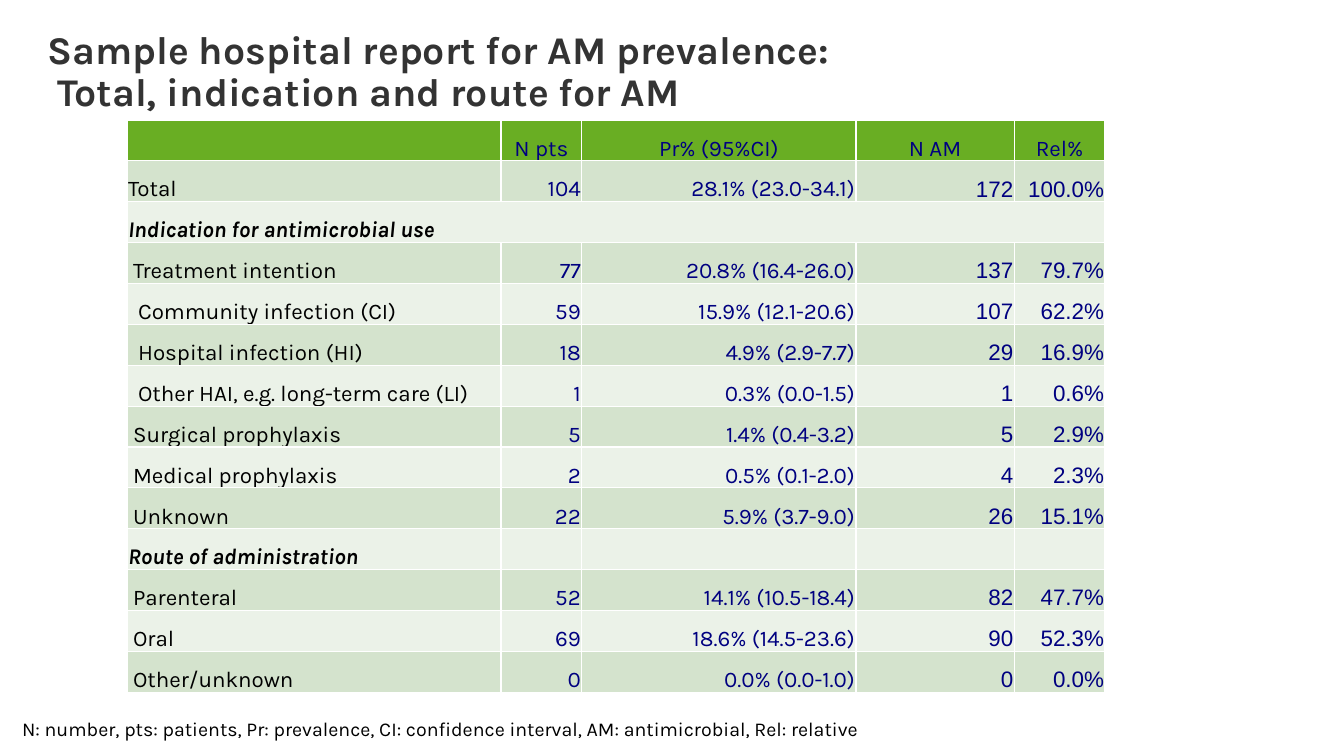
from lxml.etree import fromstring
from pptx import Presentation
from pptx.dml.color import RGBColor
from pptx.enum.text import MSO_ANCHOR, PP_ALIGN
from pptx.util import Inches, Pt

BLACK = RGBColor(0x00, 0x00, 0x00)
GREY = RGBColor(0x33, 0x33, 0x33)
NAVY = RGBColor(0x00, 0x00, 0x80)
GREEN = RGBColor(0x69, 0xAE, 0x23)
PALE = RGBColor(0xEB, 0xF2, 0xE8)
SAGE = RGBColor(0xD4, 0xE3, 0xCD)

EDGE = (
    '<a:{} xmlns:a="http://schemas.openxmlformats.org/drawingml/2006/main" w="12700">'
    '<a:solidFill><a:srgbClr val="FFFFFF"/></a:solidFill></a:{}>'
)
WIDTHS = (3.71, 0.8, 2.72, 1.57, 0.9)
HEADS = ("", "N pts", "Pr% (95%CI)", "N AM", "Rel%")
ROWS = (
    (0, "Total", "104", "28.1% (23.0-34.1)", "172", "100.0%"),
    (0, "Indication for antimicrobial use"),
    (1, "Treatment intention", "77", "20.8% (16.4-26.0)", "137", "79.7%"),
    (2, "Community infection (CI)", "59", "15.9% (12.1-20.6)", "107", "62.2%"),
    (2, "Hospital infection (HI)", "18", "4.9% (2.9-7.7)", "29", "16.9%"),
    (2, "Other HAI, e.g. long-term care (LI)", "1", "0.3% (0.0-1.5)", "1", "0.6%"),
    (1, "Surgical prophylaxis", "5", "1.4% (0.4-3.2)", "5", "2.9%"),
    (1, "Medical prophylaxis", "2", "0.5% (0.1-2.0)", "4", "2.3%"),
    (1, "Unknown", "22", "5.9% (3.7-9.0)", "26", "15.1%"),
    (0, "Route of administration", "", "", "", ""),
    (1, "Parenteral", "52", "14.1% (10.5-18.4)", "82", "47.7%"),
    (1, "Oral", "69", "18.6% (14.5-23.6)", "90", "52.3%"),
    (1, "Other/unknown", "0", "0.0% (0.0-1.0)", "0", "0.0%"),
)
BOLD_ROWS = ("Indication for antimicrobial use", "Route of administration")


class Report:
    """Holds the style and the current slide of a hospital report."""

    font = "Karla"
    digits = "Arial"
    size = 16

    def __init__(self, slide):
        self.slide = slide

    def style(self, para, size, color, bold=False, italic=False, name=None):
        para.line_spacing = 0.9
        font = para.font
        font.name = name or self.font
        font.size = Pt(size)
        font.color.rgb = color
        font.bold = bold
        font.italic = italic

    def text(self, words, box, size, color, bold=False, inset=None):
        frame = self.slide.shapes.add_textbox(*map(Inches, box)).text_frame
        frame.word_wrap = True
        if inset is not None:
            frame.margin_left = frame.margin_right = Inches(inset)
            frame.margin_top = frame.margin_bottom = Inches(inset)
        frame.text = words
        self.style(frame.paragraphs[0], size, color, bold)

    def cell(self, cell, words, fill, align, color, level=0, bold=False, name=None):
        cell.fill.solid()
        cell.fill.fore_color.rgb = fill
        cell.vertical_anchor = MSO_ANCHOR.BOTTOM
        cell.margin_left = Inches(0.01 + 0.05 * level)
        cell.margin_top = cell.margin_right = Inches(0.01)
        cell.margin_bottom = 0
        cell.text = words
        para = cell.text_frame.paragraphs[0]
        para.alignment = align
        self.style(para, self.size, color, bold, bold, name)
        props = cell._tc.get_or_add_tcPr()
        for spot, side in enumerate(("lnL", "lnR", "lnT", "lnB")):
            props.insert(spot, fromstring(EDGE.format(side, side)))

    def table(self, left, top, width, height):
        count = len(ROWS) + 1
        table = self.slide.shapes.add_table(
            count, len(HEADS), *map(Inches, (left, top, width, height))
        ).table
        table.first_row = table.horz_banding = False
        for col, wide in zip(table.columns, WIDTHS):
            col.width = Inches(wide)
        for row in table.rows:
            row.height = Inches(height / count)
        for col, head in enumerate(HEADS):
            self.cell(table.cell(0, col), head, GREEN, PP_ALIGN.CENTER, NAVY)
        for row, (level, label, *values) in enumerate(ROWS, 1):
            fill = SAGE if row % 2 else PALE
            first = table.cell(row, 0)
            bold = label in BOLD_ROWS
            self.cell(first, label, fill, PP_ALIGN.LEFT, BLACK, level, bold)
            if not values:
                first.merge(table.cell(row, len(HEADS) - 1))
            for col, value in enumerate(values, 1):
                name = self.digits if col > 2 else self.font
                self.cell(table.cell(row, col), value, fill, PP_ALIGN.RIGHT, NAVY, name=name)


def main():
    deck = Presentation()
    deck.slide_width = Inches(13.33)
    deck.slide_height = Inches(7.5)
    report = Report(deck.slides.add_slide(deck.slide_layouts[6]))
    report.text(
        "Sample hospital report for AM prevalence:\v Total, indication and route for AM",
        (0.47, 0.3, 11.28, 0.88), 28, GREY, bold=True, inset=0,
    )
    report.table(1.26, 1.19, 9.7, 5.68)
    report.text(
        "N: number, pts: patients, Pr: prevalence, CI: confidence interval, "
        "AM: antimicrobial, Rel: relative",
        (0.12, 7.09, 10.65, 0.31), 14, BLACK,
    )
    deck.save("out.pptx")


if __name__ == "__main__":
    main()
